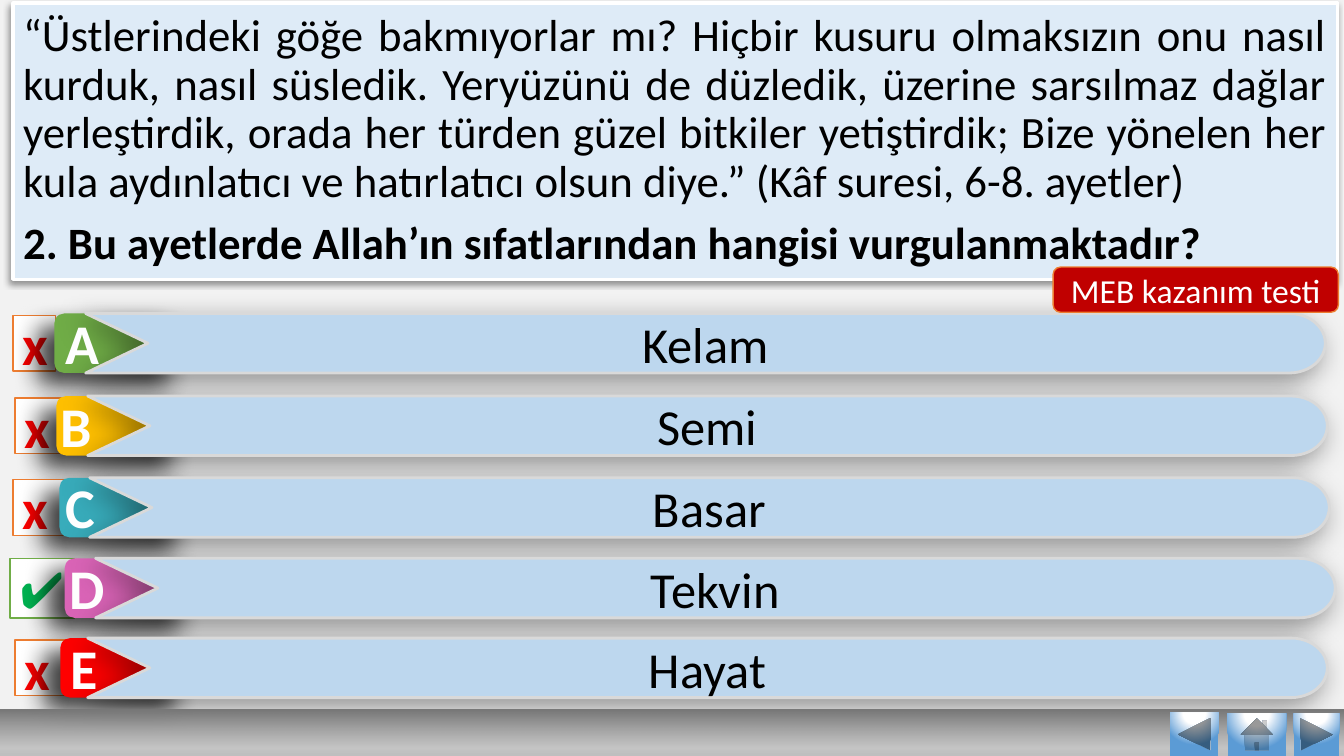
from math import cos, pi, sin

from lxml import etree
from pptx import Presentation
from pptx.dml.color import RGBColor
from pptx.enum.shapes import MSO_SHAPE
from pptx.enum.text import MSO_ANCHOR, MSO_AUTO_SIZE, PP_ALIGN
from pptx.oxml import parse_xml
from pptx.oxml.ns import qn
from pptx.util import Cm, Pt

WHITE = RGBColor(0xFF, 0xFF, 0xFF)
BLACK = RGBColor(0x00, 0x00, 0x00)
PAGE_GREY = RGBColor(0xF2, 0xF2, 0xF2)
EDGE_GREY = RGBColor(0xD9, 0xD9, 0xD9)
PALE_BLUE = RGBColor(0xDE, 0xEB, 0xF7)
BAR_BLUE = RGBColor(0xBD, 0xD7, 0xEE)
ORANGE = RGBColor(0xED, 0x7D, 0x31)
GREEN = RGBColor(0x70, 0xAD, 0x47)
CHECK_GREEN = RGBColor(0x00, 0xB0, 0x50)
YELLOW = RGBColor(0xFF, 0xC0, 0x00)
TEAL = RGBColor(0x38, 0xAC, 0xBB)
PINK = RGBColor(0xDA, 0x64, 0xB7)
RED = RGBColor(0xFF, 0x00, 0x00)
DARK_RED = RGBColor(0xC0, 0x00, 0x00)
LETTER_WHITE = RGBColor(0xFE, 0xFE, 0xFE)
DRAWING = 'xmlns:a="http://schemas.openxmlformats.org/drawingml/2006/main"'


def paint(shape, fill, line=None, width=1, shadow=None):
    """Set fill, outline and shadow (opacity %, blur pt, distance pt, angle)."""
    shape.fill.solid()
    shape.fill.fore_color.rgb = fill
    if line is None:
        shape.line.fill.background()
    else:
        shape.line.color.rgb = line
        shape.line.width = Pt(width)
    shape.shadow.inherit = False
    if shadow:
        opacity, blur, distance, angle = shadow
        effects = shape._element.spPr.find(qn("a:effectLst"))
        effects.append(parse_xml(
            f'<a:outerShdw {DRAWING} blurRad="{Pt(blur)}" dist="{Pt(distance)}" '
            f'dir="{angle * 60000}" rotWithShape="0"><a:srgbClr val="000000">'
            f'<a:alpha val="{opacity * 1000}"/></a:srgbClr></a:outerShdw>'))


def write(shape, text, size, color, bold=False, align=PP_ALIGN.CENTER):
    """Fill a shape with text in one style."""
    frame = shape.text_frame
    frame.text = text
    frame.word_wrap = True
    frame.vertical_anchor = MSO_ANCHOR.MIDDLE
    for para in frame.paragraphs:
        para.alignment = align
        for span in para.runs:
            span.font.name = "Calibri"
            span.font.size = Pt(size)
            span.font.bold = bold
            span.font.color.rgb = color


deck = Presentation()
deck.slide_width, deck.slide_height = Cm(33.87), Cm(19.05)
page = deck.slides.add_slide(deck.slide_layouts[5])
page.background.fill.solid()
page.background.fill.fore_color.rgb = PAGE_GREY

# Question
question = page.shapes.title
question.left, question.top = Cm(0.33), Cm(0.08)
question.width, question.height = Cm(33.38), Cm(6.96)
paint(question, PALE_BLUE, WHITE, 2.5, (40, 4, 3, 135))
write(question,
      "“Üstlerindeki göğe bakmıyorlar mı? Hiçbir kusuru olmaksızın onu nasıl "
      "kurduk, nasıl süsledik. Yeryüzünü de düzledik, üzerine sarsılmaz dağlar "
      "yerleştirdik, orada her türden güzel bitkiler yetiştirdik; Bize yönelen her "
      "kula aydınlatıcı ve hatırlatıcı olsun diye.” (Kâf suresi, 6-8. ayetler)\n"
      "2. Bu ayetlerde Allah’ın sıfatlarından hangisi vurgulanmaktadır?",
      32, BLACK, align=PP_ALIGN.JUSTIFY)
question.text_frame.auto_size = MSO_AUTO_SIZE.NONE
for para in question.text_frame.paragraphs:
    para.line_spacing = 0.9
    para.space_before = Pt(10)
question.text_frame.paragraphs[1].runs[0].font.bold = True

# Answers: letter, text, colour, top, then left of tab and bar,
# then left and width of the letter and of the mark
answers = [
    ("A", "Kelam", GREEN, 7.9, 1.37, 2.16, 1.07, 2.01, 0.33, 1.07),
    ("B", "Semi", YELLOW, 9.98, 1.42, 2.21, 0.91, 2.01, 0.38, 1.4),
    ("C", "Basar", TEAL, 12.04, 1.5, 2.26, 1.14, 1.75, 0.33, 1.4),
    ("D", "Tekvin", PINK, 14.07, 1.63, 2.41, 1.19, 2.01, 0.25, 1.63),
    ("E", "Hayat", RED, 16.08, 1.52, 2.21, 1.19, 1.85, 0.38, 1.4),
]
correct = "D"
bar_width, bar_height, notch, cap = 31.24, 1.5, 1.57, 0.91
half = bar_height / 2
steps = 24

for (letter, answer, color, top, tab_left, bar_left,
     letter_left, letter_width, mark_left, mark_width) in answers:
    # Right or wrong mark
    right = letter == correct
    mark = page.shapes.add_shape(
        MSO_SHAPE.RECTANGLE, Cm(mark_left), Cm(top if right else top + 0.05),
        Cm(mark_width), Cm(1.5 if right else 1.4))
    paint(mark, WHITE, GREEN if right else ORANGE)
    if right:
        write(mark, "✔", 36, CHECK_GREEN, align=PP_ALIGN.LEFT)
    else:
        write(mark, "x", 40, RED, bold=True, align=PP_ALIGN.LEFT)

    # Coloured tab
    tab = page.shapes.add_shape(MSO_SHAPE.ROUNDED_RECTANGLE, Cm(tab_left), Cm(top),
                                Cm(3.33), Cm(bar_height))
    paint(tab, color, shadow=(75, 18, 15, 143))

    # Bar with a notch on the left and a round cap on the right
    cap_left = bar_left + bar_width - cap
    angles = [pi * step / steps - pi / 2 for step in range(steps + 1)]
    outline = [(cap_left + cap * cos(angle), top + half + half * sin(angle))
               for angle in angles]
    outline += [(bar_left, top + bar_height), (bar_left + notch, top + half)]
    builder = page.shapes.build_freeform(Cm(bar_left), Cm(top))
    builder.add_line_segments([(Cm(x), Cm(y)) for x, y in outline], close=True)
    bar = builder.convert_to_shape()
    paint(bar, BAR_BLUE, EDGE_GREY, 2, (40, 20, 7, 135))
    write(bar, answer, 36, BLACK)

    # Outlined letter
    box = page.shapes.add_textbox(Cm(letter_left), Cm(top - 0.25),
                                  Cm(letter_width), Cm(1.96))
    write(box, letter, 40, LETTER_WHITE, bold=True)
    box.text_frame.vertical_anchor = MSO_ANCHOR.TOP
    box.text_frame.auto_size = MSO_AUTO_SIZE.SHAPE_TO_FIT_TEXT
    style = box.text_frame.paragraphs[0].runs[0].font._element
    style.set("spc", "50")
    style.insert(0, parse_xml(
        f'<a:ln {DRAWING} w="{Pt(0.75)}"><a:solidFill><a:srgbClr val="FFFFFF"/>'
        '</a:solidFill></a:ln>'))

# Footer and navigation buttons
footer_stops = [(0, "C0C0C0", 100), (17, "B3B3B3", 70), (100, "777777", 100)]
button_stops = [(0, "FFFFFF", 100), (35, "FFFFFF", 100), (100, "5B9BD5", 100)]
upward = '<a:lin ang="16200000" scaled="0"/>'
radial = ('<a:path path="circle"><a:fillToRect l="50000" t="-80000" r="50000" '
          'b="180000"/></a:path>')
for kind, left, top, width, height, stops, direction in [
    (MSO_SHAPE.RECTANGLE, 0, 17.88, 33.87, 1.17, footer_stops, upward),
    (MSO_SHAPE.ACTION_BUTTON_BACK_OR_PREVIOUS, 29.49, 17.96, 1.22, 1.09,
     button_stops, radial),
    (MSO_SHAPE.ACTION_BUTTON_FORWARD_OR_NEXT, 32.61, 17.98, 1.14, 1.07,
     button_stops, radial),
    (MSO_SHAPE.ACTION_BUTTON_HOME, 30.94, 17.98, 1.47, 1.07, button_stops, radial),
]:
    shape = page.shapes.add_shape(kind, Cm(left), Cm(top), Cm(width), Cm(height))
    paint(shape, WHITE)
    gradient = parse_xml(f'<a:gradFill {DRAWING} rotWithShape="1"><a:gsLst/>'
                         f'{direction}</a:gradFill>')
    for position, value, opacity in stops:
        stop = etree.SubElement(gradient[0], qn("a:gs"), pos=str(position * 1000))
        tint = etree.SubElement(stop, qn("a:srgbClr"), val=value)
        if opacity < 100:
            etree.SubElement(tint, qn("a:alpha"), val=str(opacity * 1000))
    properties = shape._element.spPr
    properties.replace(properties.find(qn("a:solidFill")), gradient)

# Test badge
badge = page.shapes.add_shape(MSO_SHAPE.ROUNDED_RECTANGLE, Cm(26.54), Cm(6.73),
                              Cm(7.19), Cm(1.14))
paint(badge, DARK_RED, ORANGE)
write(badge, "MEB kazanım testi", 24, WHITE)

deck.save("out.pptx")
